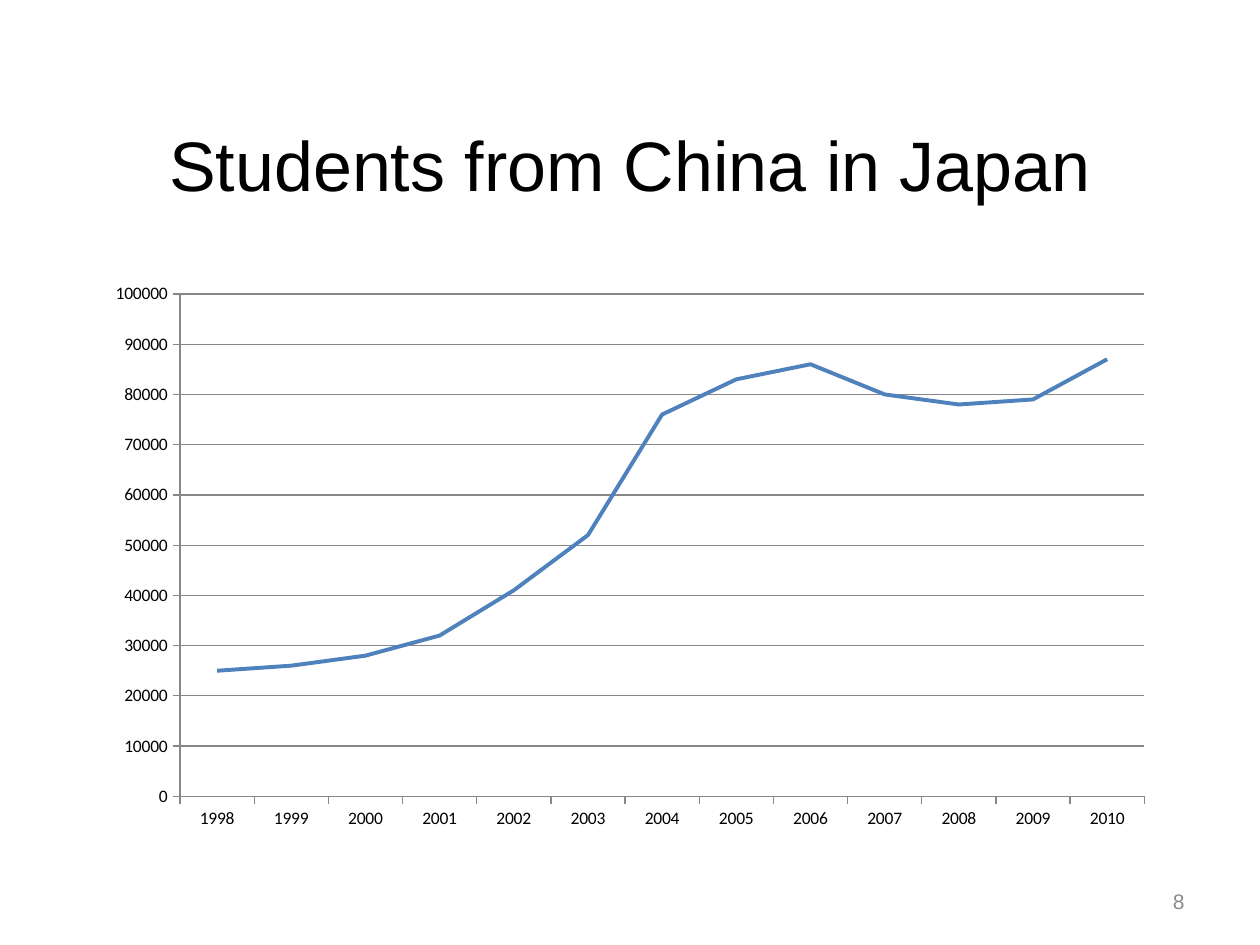
from dataclasses import dataclass

from pptx import Presentation
from pptx.chart.data import CategoryChartData as Data
from pptx.dml.color import RGBColor
from pptx.enum.chart import XL_CHART_TYPE as Kind, XL_TICK_MARK as Tick
from pptx.enum.text import MSO_ANCHOR as Anchor, PP_ALIGN as Align
from pptx.util import Cm, Pt

BLACK = RGBColor(0x00, 0x00, 0x00)
GREY = RGBColor(0x8C, 0x8C, 0x8C)
RULE = RGBColor(0x87, 0x87, 0x87)
BLUE = RGBColor(0x4F, 0x81, 0xBD)

YEARS = [str(year) for year in range(1998, 2011)]
COUNTS = [25000, 26000, 28000, 32000, 41000, 52000, 76000,
          83000, 86000, 80000, 78000, 79000, 87000]


@dataclass(frozen=True)
class Box:
    left: float
    top: float
    width: float
    height: float

    def place(self) -> list[Cm]:
        return [Cm(n) for n in (self.left, self.top, self.width, self.height)]


def add_text(slide, text: str, box: Box, *, size: float, color: RGBColor,
             align: Align, font: str = "Arial") -> None:
    frame = slide.shapes.add_textbox(*box.place()).text_frame
    frame.word_wrap = True
    frame.vertical_anchor = Anchor.MIDDLE
    para = frame.paragraphs[0]
    para.alignment = align
    run = para.add_run()
    run.text = text
    run.font.name = font
    run.font.size = Pt(size)
    run.font.color.rgb = color


def style_line(line, color: RGBColor, width: float) -> None:
    line.color.rgb = color
    line.width = Pt(width)


def add_trend(slide, box: Box) -> None:
    data = Data()
    data.categories = YEARS
    data.add_series("Series 1", COUNTS)
    chart = slide.shapes.add_chart(Kind.LINE, *box.place(), data).chart
    chart.has_legend = False
    chart.has_title = False
    chart.font.name = "Calibri"
    chart.font.size = Pt(10)
    chart.font.color.rgb = BLACK

    for axis in (chart.category_axis, chart.value_axis):
        axis.major_tick_mark = Tick.OUTSIDE
        axis.minor_tick_mark = Tick.NONE
        style_line(axis.format.line, RULE, 0.75)
    scale = chart.value_axis
    scale.minimum_scale = 0
    scale.maximum_scale = 100000
    scale.major_unit = 10000
    scale.has_major_gridlines = True
    style_line(scale.major_gridlines.format.line, RULE, 0.75)

    trend = chart.plots[0].series[0]
    trend.smooth = False
    style_line(trend.format.line, BLUE, 2.25)


def main() -> None:
    """Build the slide on Chinese students in Japan."""
    deck = Presentation()
    deck.slide_width, deck.slide_height = Cm(25.4), Cm(19.05)
    slide = deck.slides.add_slide(deck.slide_layouts[6])
    add_text(slide, "Students from China in Japan", Box(1.9, 1.7, 21.6, 3.18),
             size=40, color=BLACK, align=Align.CENTER)
    add_trend(slide, Box(1.9, 5.5, 21.6, 11.43))
    add_text(slide, "8", Box(18.2, 17.66, 5.93, 1.01),
             size=12, color=GREY, align=Align.RIGHT)
    deck.save("out.pptx")


if __name__ == "__main__":
    main()
